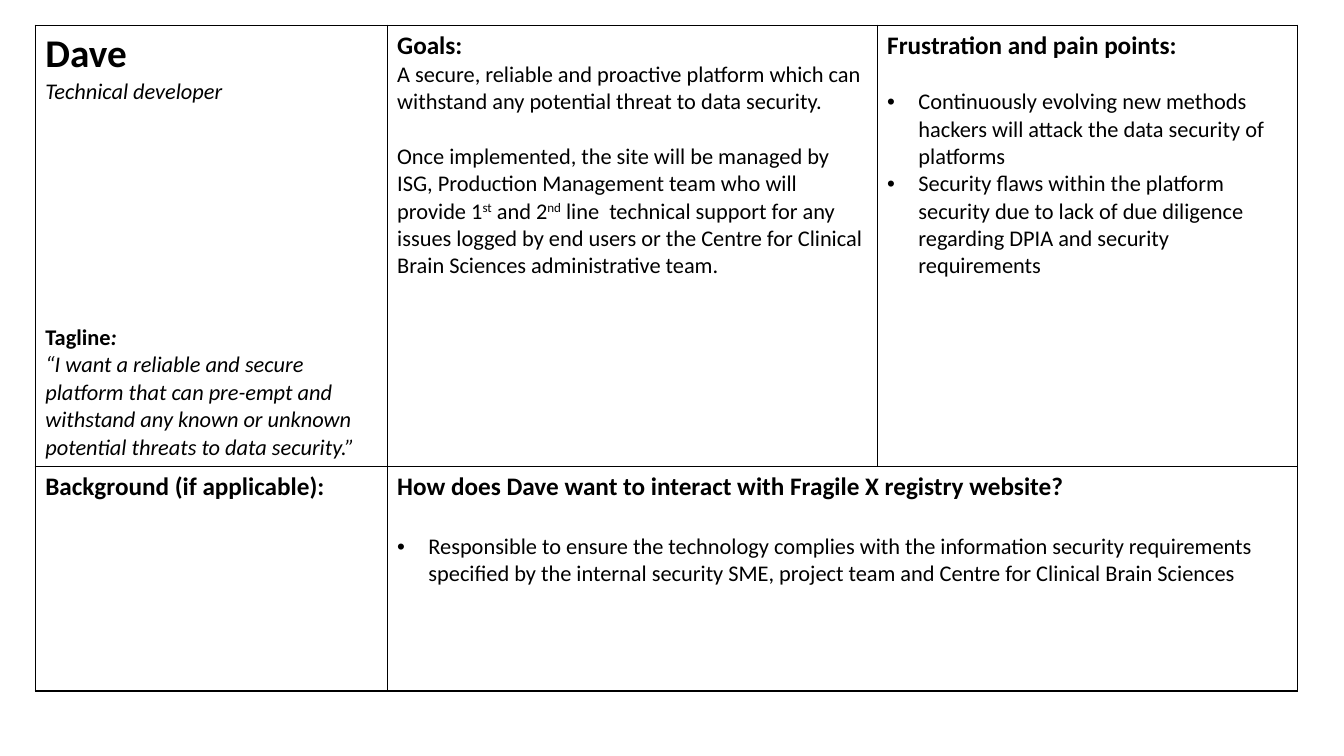
from lxml import etree
from pptx import Presentation
from pptx import util as u
from pptx.dml.color import RGBColor
from pptx.oxml.ns import qn

COLORS = {"ink": "000000", "paper": "FFFFFF"}
COLUMNS = [3.49, 4.86, 4.17]
ROWS = [3.71, 2.23]
LINE = 1.22  # line height as a share of the font size

NAME = {"size": u.Pt(28), "bold": True, "italic": False}
HEADING = {"size": u.Pt(18), "bold": True, "italic": False}
LABEL = {"size": u.Pt(16), "bold": True, "italic": False}
LABEL_COLON = {"size": u.Pt(16), "bold": True, "italic": True}
BODY = {"size": u.Pt(16), "bold": False, "italic": False}
QUOTE = {"size": u.Pt(16), "bold": False, "italic": True}
ORDINAL = "ordinal"

# Each paragraph: gap above in points, bulleted or not, runs of (text, format)
PERSONA = {
    (0, 0): [
        (0, False, [("Dave", NAME)]),
        (0, False, [("Technical developer", QUOTE)]),
        (8 * 16 * LINE, False, [("Tagline", LABEL), (":", LABEL_COLON)]),
        (0, False, [("“I want a reliable and secure platform that can pre-empt and withstand "
                     "any known or unknown potential threats to data security.”", QUOTE)]),
    ],
    (0, 1): [
        (0, False, [("Goals:", HEADING)]),
        (0, False, [("A secure, reliable and proactive platform which can withstand any "
                     "potential threat to data security.", BODY)]),
        (16 * LINE, False, [
            ("Once implemented, the site will be managed by ISG, Production Management "
             "team who will provide 1", BODY),
            ("st", ORDINAL), (" and 2", BODY), ("nd", ORDINAL),
            (" line  technical support for any issues logged by end users or the Centre "
             "for Clinical Brain Sciences administrative team.", BODY)]),
    ],
    (0, 2): [
        (0, False, [("Frustration and pain points:", HEADING)]),
        (16 * LINE, True, [("Continuously evolving new methods hackers will attack the data "
                            "security of platforms", BODY)]),
        (0, True, [("Security flaws within the platform security due to lack of due "
                    "diligence regarding DPIA and security requirements", BODY)]),
    ],
    (1, 0): [(0, False, [("Background (if applicable):", HEADING)])],
    (1, 1): [
        (0, False, [("How does Dave want to interact with Fragile X registry website?", HEADING)]),
        (18 * LINE, True, [("Responsible to ensure the technology complies with the information "
                            "security requirements specified by the internal security SME, "
                            "project team and Centre for Clinical Brain Sciences", BODY)]),
    ],
}


def add_borders(cell):
    properties = cell._tc.get_or_add_tcPr()
    for side in ("lnL", "lnR", "lnT", "lnB"):
        border = etree.SubElement(properties, qn(f"a:{side}"), w=str(u.Pt(1)))
        fill = etree.SubElement(border, qn("a:solidFill"))
        etree.SubElement(fill, qn("a:srgbClr"), val=COLORS["ink"])


def add_bullet(paragraph):
    properties = paragraph._p.get_or_add_pPr()
    properties.set("marL", str(u.Inches(0.31)))
    properties.set("indent", str(u.Inches(-0.31)))
    etree.SubElement(properties, qn("a:buFont"), typeface="Arial")
    etree.SubElement(properties, qn("a:buChar"), char="•")


deck = Presentation()
deck.slide_width, deck.slide_height = u.Inches(13.33), u.Inches(7.5)
slide = deck.slides.add_slide(deck.slide_layouts[6])

persona = slide.shapes.add_table(
    len(ROWS), len(COLUMNS), u.Inches(0.35), u.Inches(0.25),
    u.Inches(sum(COLUMNS)), u.Inches(sum(ROWS))).table
persona.first_row = persona.horz_banding = False
for column, width in zip(persona.columns, COLUMNS):
    column.width = u.Inches(width)
for row, height in zip(persona.rows, ROWS):
    row.height = u.Inches(height)

for cell in persona.iter_cells():
    add_borders(cell)
    cell.fill.solid()
    cell.fill.fore_color.rgb = RGBColor.from_string(COLORS["paper"])
persona.cell(1, 1).merge(persona.cell(1, 2))

for (row, column), paragraphs in PERSONA.items():
    frame = persona.cell(row, column).text_frame
    for index, (gap, bulleted, runs) in enumerate(paragraphs):
        paragraph = frame.add_paragraph() if index else frame.paragraphs[0]
        paragraph.space_before = u.Pt(gap)
        if bulleted:
            add_bullet(paragraph)
        for words, style in runs:
            run = paragraph.add_run()
            run.text = words
            run.font.name = "Calibri"
            run.font.color.rgb = RGBColor.from_string(COLORS["ink"])
            for attribute, value in (BODY if style == ORDINAL else style).items():
                setattr(run.font, attribute, value)
            if style == ORDINAL:
                run._r.get_or_add_rPr().set("baseline", "30000")

deck.save("out.pptx")
